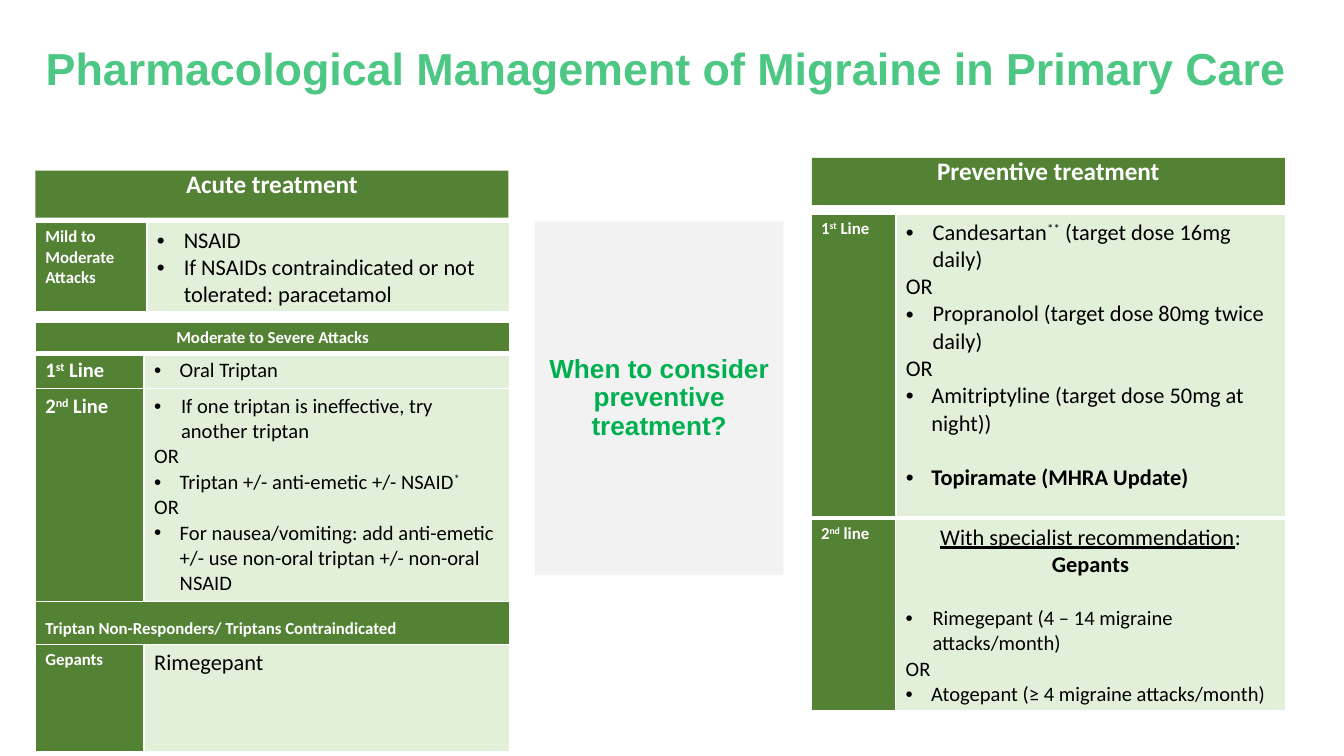
from lxml import etree
from pptx import Presentation, util as u
from pptx.dml.color import RGBColor
from pptx.enum import shapes, text
from pptx.oxml import ns

GREEN = RGBColor(0x54, 0x82, 0x35)
PALE_GREEN = RGBColor(0xE2, 0xF0, 0xD9)
BRIGHT_GREEN = RGBColor(0x00, 0xB0, 0x50)
GREY = RGBColor(0xF2, 0xF2, 0xF2)
WHITE = RGBColor(0xFF, 0xFF, 0xFF)
BLACK = RGBColor(0x00, 0x00, 0x00)

presentation = Presentation()
presentation.slide_width = u.Inches(10)
presentation.slide_height = presentation.slide_width * 9 // 16
slide = presentation.slides.add_slide(presentation.slide_layouts[5])

# The page is a grid of 1000 columns of square units.
UNIT = presentation.slide_width // 1000
LEFT, RIGHT, PANEL = 26.25, 604, 352
INSETS = (7.5, 3.75, 7.5, 3.75)

LABEL = {"fill": GREEN, "color": WHITE, "bold": True}
BODY = {"fill": PALE_GREEN, "color": BLACK, "bold": False}
WIDE, NARROW = {"indent": 20}, {"indent": 19}
CENTRE = {"align": text.PP_ALIGN.CENTER}
SUPER = {"super": True}
BOLD = {"bold": True}
OR = ({}, ["OR"])


def write(frame, paragraphs, size, color, bold, name="Calibri", spacing=None):
    """Fill a frame with (options, runs) pairs; a run is text or (text, font values)."""
    frame.word_wrap = True
    for index, (options, runs) in enumerate(paragraphs):
        paragraph = frame.paragraphs[0] if index == 0 else frame.add_paragraph()
        if "indent" in options:
            properties = paragraph._p.get_or_add_pPr()
            indent = options["indent"] * UNIT
            properties.set("marL", str(indent))
            properties.set("indent", str(-indent))
            etree.SubElement(properties, ns.qn("a:buFont"), typeface="Arial")
            etree.SubElement(properties, ns.qn("a:buChar"), char="•")
        if "align" in options:
            paragraph.alignment = options["align"]
        if "gap" in options:
            paragraph.space_before = u.Pt(options["gap"])
        if spacing:
            paragraph.line_spacing = spacing
        for item in runs:
            words, extra = (item, {}) if isinstance(item, str) else item
            run = paragraph.add_run()
            run.text = words
            values = {"name": name, "size": u.Pt(options.get("size", size)), "bold": bold}
            values.update(extra)
            if values.pop("super", False):
                run._r.get_or_add_rPr().set("baseline", "30000")
            for key, value in values.items():
                setattr(run.font, key, value)
            run.font.color.rgb = color


def set_margins(target, left, top, right, bottom):
    for side, value in zip(("left", "top", "right", "bottom"), (left, top, right, bottom)):
        setattr(target, "margin_" + side, int(value * UNIT))


# Title
title = slide.shapes.title
title.left, title.top, title.width, title.height = (n * UNIT for n in (34, 23, 934, 59))
set_margins(title.text_frame, 0, 0, 0, 0)
title.text_frame.vertical_anchor = text.MSO_ANCHOR.MIDDLE
write(title.text_frame,
      [({"align": text.PP_ALIGN.LEFT}, ["Pharmacological Management of Migraine in Primary Care"])],
      24, BRIGHT_GREEN, True, "Arial", 0.9)
for colour in title._element.iter(ns.qn("a:srgbClr")):
    etree.SubElement(colour, ns.qn("a:alpha"), val="70000")

# Panel headings and the central question
TOP, MIDDLE = text.MSO_ANCHOR.TOP, text.MSO_ANCHOR.MIDDLE
HEADING = (GREEN, TOP, (7.5, 1, 7.5, 3.75), (13.5, WHITE, True, "Calibri"))
boxes = [
    ("Acute treatment", (LEFT, 127, PANEL, 35), *HEADING),
    ("Preventive treatment", (RIGHT, 117.4, PANEL, 35), *HEADING),
    ("When to consider preventive treatment?", (398, 165, 185, 263), GREY, MIDDLE, (10, 5, 10, 5),
     (14, BRIGHT_GREEN, True, "Arial")),
]
for words, place, fill, anchor, margins, font in boxes:
    box = slide.shapes.add_shape(shapes.MSO_SHAPE.RECTANGLE, *(int(n * UNIT) for n in place))
    box.shadow.inherit = False
    box.fill.solid()
    box.fill.fore_color.rgb = fill
    box.line.fill.background()
    set_margins(box.text_frame, *margins)
    box.text_frame.vertical_anchor = anchor
    write(box.text_frame, [(CENTRE, [words])], *font, spacing=0.9)

# Tables: left, top, column widths, row heights, rows of (style, size, paragraphs).
# A row with a single cell spans the whole table.
tables = [
    (LEFT, 165, (83, 270), (67,), [
        [(LABEL, 9, [({}, ["Mild to Moderate Attacks"])]),
         (BODY, 12, [(WIDE, ["NSAID"]),
                     (WIDE, ["If NSAIDs contraindicated or not tolerated: paracetamol"])])],
    ]),
    (LEFT, 240, (81, 272), (21, 24, 157, 32, 80), [
        [(LABEL, 9, [(CENTRE, ["Moderate to Severe Attacks"])])],
        [(LABEL, 11, [({}, ["1", ("st", SUPER), " Line"])]),
         (BODY, 11, [(NARROW, ["Oral Triptan"])])],
        [(LABEL, 11, [({}, ["2", ("nd", SUPER), " Line"])]),
         (BODY, 11, [
             (WIDE, ["If one triptan is ineffective, try another triptan"]),
             OR,
             (NARROW, ["Triptan +/- anti-emetic +/- NSAID", ("*", SUPER)]),
             OR,
             (NARROW, ["For nausea/vomiting: add anti-emetic +/- use non-oral triptan "
                       "+/- non-oral NSAID"])])],
        [(LABEL | {"anchor": text.MSO_ANCHOR.BOTTOM}, 9,
          [({}, ["Triptan Non-Responders/ Triptans Contraindicated"])])],
        [(LABEL, 9, [({}, ["Gepants"])]),
         (BODY, 12, [({}, ["Rimegepant"])])],
    ]),
    (RIGHT - 0.5, 159, (63, 290), (227,), [
        [(LABEL, 9, [({}, ["1", ("st", SUPER), " Line"])]),
         (BODY, 12, [
             (WIDE, ["Candesartan", ("**", SUPER), " (target dose 16mg daily)"]),
             OR,
             (WIDE, ["Propranolol (target dose 80mg twice daily)"]),
             OR,
             (NARROW, ["Amitriptyline (target dose 50mg at night))"]),
             (NARROW | {"gap": 14.6}, [("Topiramate (MHRA Update)", BOLD)])])],
    ]),
    (RIGHT - 0.6, 386, (63, 290), (141,), [
        [(LABEL, 9, [({}, ["2", ("nd", SUPER), " line"])]),
         (BODY, 11, [
             (CENTRE | {"size": 12}, [("With specialist recommendation", {"underline": True}),
                                      ": ", ("Gepants", BOLD)]),
             (WIDE | {"gap": 14.6}, ["Rimegepant (4 – 14 migraine attacks/month)"]),
             OR,
             (NARROW, ["Atogepant (≥ 4 migraine attacks/month)"])])],
    ]),
]
for left, top, widths, heights, rows in tables:
    frame = slide.shapes.add_table(len(heights), len(widths), int(left * UNIT), top * UNIT,
                                   sum(widths) * UNIT, sum(heights) * UNIT)
    table = frame.table
    for column, width in zip(table.columns, widths):
        column.width = width * UNIT
    for row_number, (height, row) in enumerate(zip(heights, rows)):
        table.rows[row_number].height = height * UNIT
        if len(row) == 1:
            table.cell(row_number, 0).merge(table.cell(row_number, len(widths) - 1))
        for cell in table.rows[row_number].cells:
            properties = cell._tc.get_or_add_tcPr()
            for side in ("L", "R", "T", "B"):
                points = 3 if side == "B" and row_number == 0 else 1
                line = etree.SubElement(properties, ns.qn("a:ln" + side), w=str(u.Pt(points)))
                fill = etree.SubElement(line, ns.qn("a:solidFill"))
                etree.SubElement(fill, ns.qn("a:srgbClr"), val=str(WHITE))
        for column_number, (style, size, paragraphs) in enumerate(row):
            cell = table.cell(row_number, column_number)
            cell.fill.solid()
            cell.fill.fore_color.rgb = style["fill"]
            cell.vertical_anchor = style.get("anchor", TOP)
            set_margins(cell, *INSETS)
            write(cell.text_frame, paragraphs, size, style["color"], style["bold"])

presentation.save("out.pptx")
